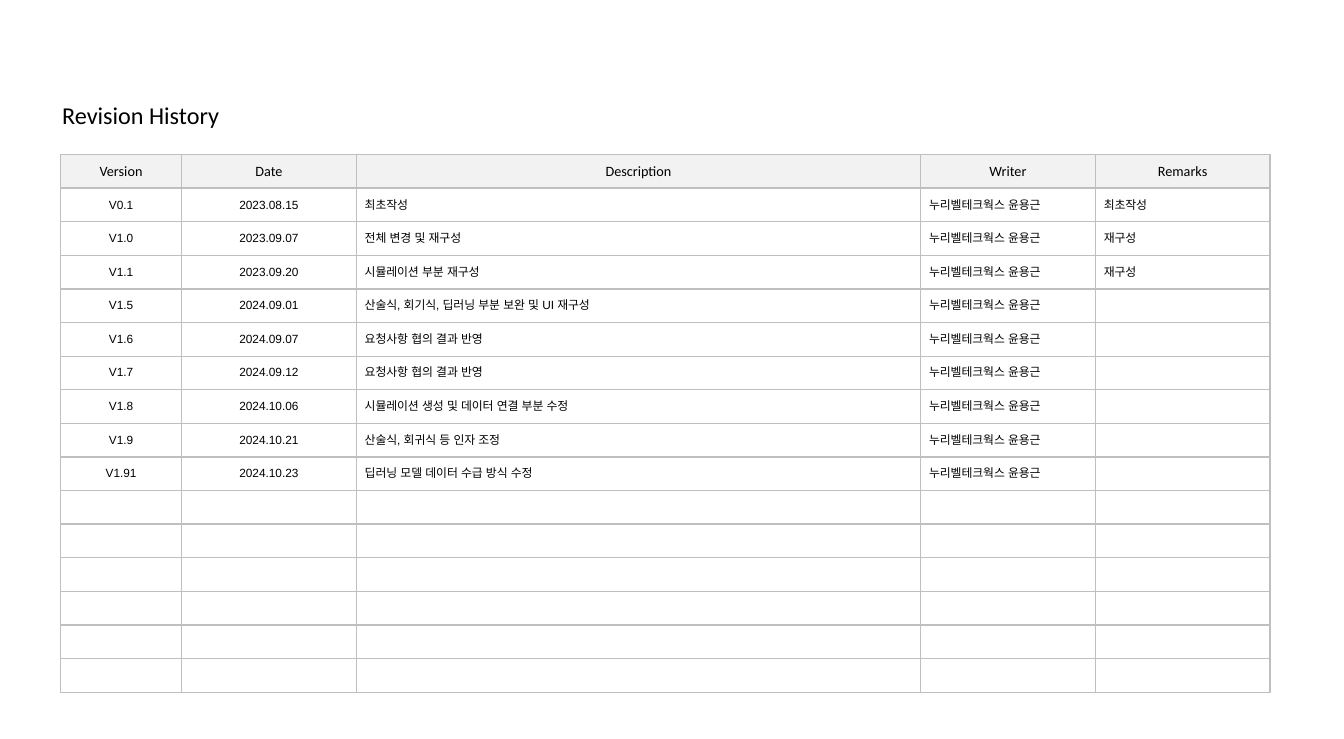
from dataclasses import dataclass

from lxml.etree import SubElement
from pptx import Presentation
from pptx.dml.color import RGBColor
from pptx.enum.shapes import MSO_SHAPE as Preset
from pptx.enum.text import MSO_ANCHOR as Anchor, PP_ALIGN as Align
from pptx.oxml.ns import qn
from pptx.util import Pt

# Content
TITLE = "Revision History"
HEADINGS = ["Version", "Date", "Description", "Writer", "Remarks"]
WRITER = "누리벨테크웍스 윤용근"
REVISIONS = [
    ("V0.1", "2023.08.15", "최초작성", WRITER, "최초작성"),
    ("V1.0", "2023.09.07", "전체 변경 및 재구성", WRITER, "재구성"),
    ("V1.1", "2023.09.20", "시뮬레이션 부분 재구성", WRITER, "재구성"),
    ("V1.5", "2024.09.01", "산술식, 회기식, 딥러닝 부분 보완 및 UI 재구성", WRITER, ""),
    ("V1.6", "2024.09.07", "요청사항 협의 결과 반영", WRITER, ""),
    ("V1.7", "2024.09.12", "요청사항 협의 결과 반영", WRITER, ""),
    ("V1.8", "2024.10.06", "시뮬레이션 생성 및 데이터 연결 부분 수정", WRITER, ""),
    ("V1.9", "2024.10.21", "산술식, 회귀식 등 인자 조정", WRITER, ""),
    ("V1.91", "2024.10.23", "딥러닝 모델 데이터 수급 방식 수정", WRITER, ""),
]
ROW_COUNT = 15


@dataclass(frozen=True)
class Theme:
    text: str = "000000"
    heading_fill: str = "F2F2F2"
    border: str = "BFBFBF"
    border_width: float = 1
    heading_font: str = "Calibri"
    body_font: str = "Arial"
    title_size: float = 20.4
    heading_size: float = 12
    body_size: float = 10


theme = Theme()

# Layout in points
PAGE_WIDTH, PAGE_HEIGHT = 1134, 623.5
LEFT, HEADING_TOP, ROW_HEIGHT = 51.1, 130.4, 28.35
COLUMN_WIDTHS = [102.1, 147.4, 476.2, 147.4, 147.4]
CENTRED_COLUMNS = 2


def write(frame, text, *, font, size, align=Align.LEFT):
    para = frame.paragraphs[0]
    para.alignment = align
    span = para.add_run()
    span.text = text
    span.font.name = font
    span.font.size = Pt(size)
    span.font.color.rgb = RGBColor.from_string(theme.text)
    SubElement(span.font._element, qn("a:ea"), typeface=font)


deck = Presentation()
deck.slide_width, deck.slide_height = Pt(PAGE_WIDTH), Pt(PAGE_HEIGHT)
page = deck.slides.add_slide(deck.slide_layouts[6])

# Title
title = page.shapes.add_textbox(Pt(45.4), Pt(81.2), Pt(148.3), Pt(31.7))
title.text_frame.word_wrap = False
write(title.text_frame, TITLE, font=theme.heading_font, size=theme.title_size)

# Ruled form: a heading row above the empty rows
for row in range(ROW_COUNT + 1):
    for column, (heading, width) in enumerate(zip(HEADINGS, COLUMN_WIDTHS)):
        left = LEFT + sum(COLUMN_WIDTHS[:column])
        top = HEADING_TOP + row * ROW_HEIGHT
        box = page.shapes.add_shape(
            Preset.RECTANGLE, Pt(left), Pt(top), Pt(width), Pt(ROW_HEIGHT))
        box.shadow.inherit = False
        box.line.color.rgb = RGBColor.from_string(theme.border)
        box.line.width = Pt(theme.border_width)
        if row == 0:
            box.fill.solid()
            box.fill.fore_color.rgb = RGBColor.from_string(theme.heading_fill)
            box.text_frame.vertical_anchor = Anchor.MIDDLE
            write(box.text_frame, heading, font=theme.heading_font,
                  size=theme.heading_size, align=Align.CENTER)
        else:
            box.fill.background()

# Revision table
table = page.shapes.add_table(
    ROW_COUNT, len(HEADINGS), Pt(LEFT), Pt(HEADING_TOP + ROW_HEIGHT),
    Pt(sum(COLUMN_WIDTHS)), Pt(ROW_COUNT * ROW_HEIGHT)).table
table.first_row = table.horz_banding = False
for column, width in zip(table.columns, COLUMN_WIDTHS):
    column.width = Pt(width)
for row in table.rows:
    row.height = Pt(ROW_HEIGHT)
    for cell in row.cells:
        cell.margin_top = cell.margin_bottom = 0
        cell.vertical_anchor = Anchor.MIDDLE
        cell.fill.background()
        properties = cell._tc.get_or_add_tcPr()
        for position, side in enumerate(("lnL", "lnR", "lnT", "lnB")):
            line = properties.makeelement(qn(f"a:{side}"), {})
            SubElement(line, qn("a:noFill"))
            properties.insert(position, line)

for row, revision in zip(table.rows, REVISIONS):
    for column, (cell, text) in enumerate(zip(row.cells, revision)):
        if text:
            write(cell.text_frame, text, font=theme.body_font, size=theme.body_size,
                  align=Align.CENTER if column < CENTRED_COLUMNS else Align.LEFT)

deck.save("out.pptx")
